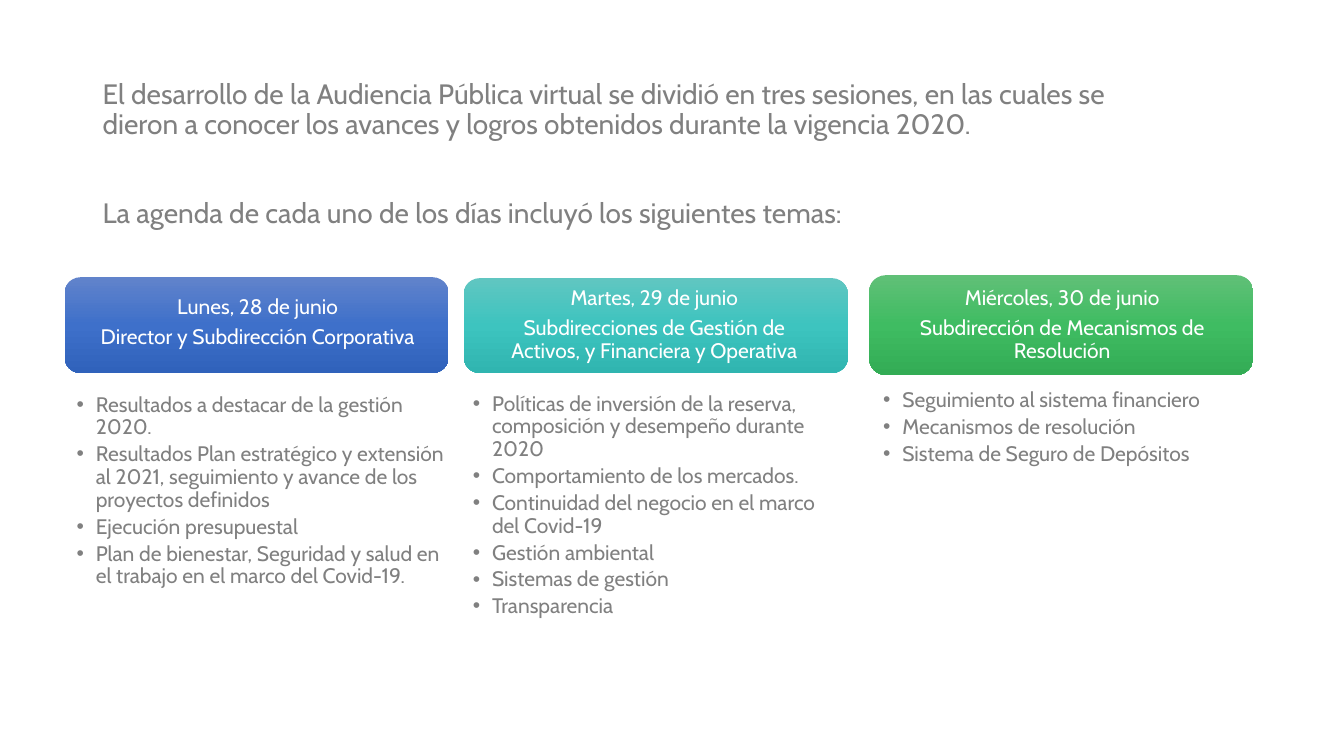
from dataclasses import dataclass

import pptx
import pptx.dml.color
import pptx.enum.shapes
import pptx.enum.text
import pptx.oxml.ns
import pptx.presentation
import pptx.shapes.autoshape
import pptx.slide
import pptx.util
from copy import deepcopy
from lxml import etree

Inches = pptx.util.Inches
Pt = pptx.util.Pt
RGBColor = pptx.dml.color.RGBColor
Align = pptx.enum.text.PP_ALIGN
Anchor = pptx.enum.text.MSO_ANCHOR
qn = pptx.oxml.ns.qn

FONT = "Cabin"
GRAY = RGBColor(0x80, 0x80, 0x80)
WHITE = RGBColor(0xFF, 0xFF, 0xFF)
BLUES = (RGBColor(0x61, 0x83, 0xCB), RGBColor(0x3E, 0x70, 0xCA), RGBColor(0x30, 0x62, 0xBB))
TEALS = (RGBColor(0x60, 0xC6, 0xC1), RGBColor(0x3D, 0xC4, 0xBF), RGBColor(0x30, 0xB5, 0xB0))
GREENS = (RGBColor(0x60, 0xC0, 0x77), RGBColor(0x3F, 0xBC, 0x62), RGBColor(0x33, 0xAC, 0x55))
BULLET_INDENT = Inches(0.19)

Box = tuple[float, float, float, float]


@dataclass(frozen=True)
class Session:
    card: Box
    heading: Box
    agenda: Box
    gradient: tuple[RGBColor, RGBColor, RGBColor]
    date: str
    speakers: str
    topics: tuple[str, ...]


SESSIONS = (
    Session(
        (0.64, 2.75, 3.81, 0.95), (0.66, 2.78, 3.79, 0.85), (0.57, 3.9, 3.92, 1.55), BLUES,
        "Lunes, 28 de junio",
        "Director y Subdirección Corporativa",
        (
            "Resultados a destacar de la gestión 2020.",
            "Resultados Plan estratégico y extensión al 2021, seguimiento y avance de los proyectos definidos",
            "Ejecución presupuestal",
            "Plan de bienestar, Seguridad y salud en el trabajo en el marco del Covid-19.",
        ),
    ),
    Session(
        (4.6, 2.76, 3.81, 0.94), (4.79, 2.8, 3.4, 0.85), (4.5, 3.89, 3.92, 1.67), TEALS,
        "Martes, 29 de junio",
        "Subdirecciones de Gestión de Activos, y Financiera y Operativa",
        (
            "Políticas de inversión de la reserva, composición y desempeño durante 2020",
            "Comportamiento de los mercados.",
            "Continuidad del negocio en el marco del Covid-19",
            "Gestión ambiental",
            "Sistemas de gestión",
            "Transparencia",
        ),
    ),
    Session(
        (8.62, 2.73, 3.81, 0.99), (8.84, 2.78, 3.39, 0.89), (8.57, 3.85, 3.5, 0.72), GREENS,
        "Miércoles, 30 de junio",
        "Subdirección de Mecanismos de Resolución",
        (
            "Seguimiento al sistema financiero",
            "Mecanismos de resolución",
            "Sistema de Seguro de Depósitos",
        ),
    ),
)

INTRO = (
    "El desarrollo de la Audiencia Pública virtual se dividió en tres sesiones, en las cuales se "
    "dieron a conocer los avances y logros obtenidos durante la vigencia 2020.",
    "La agenda de cada uno de los días incluyó los siguientes temas:",
)


def add_bullet(paragraph) -> None:
    properties = paragraph._p.get_or_add_pPr()
    properties.set("marL", str(BULLET_INDENT))
    properties.set("indent", str(-BULLET_INDENT))
    etree.SubElement(properties, qn("a:buFont")).set("typeface", "Arial")
    etree.SubElement(properties, qn("a:buChar")).set("char", "•")


def add_text(
    slide: pptx.slide.Slide,
    box: Box,
    lines: tuple[str, ...],
    size: float,
    color: RGBColor,
    insets: Box = (0.1, 0.05, 0.1, 0.05),
    align: Align = Align.LEFT,
    anchor: Anchor = Anchor.TOP,
    gap_before: float = 0,
    gap_after: float = 0,
    bulleted: bool = False,
) -> None:
    frame = slide.shapes.add_textbox(*map(Inches, box)).text_frame
    frame.word_wrap = True
    frame.vertical_anchor = anchor
    frame.margin_left, frame.margin_top, frame.margin_right, frame.margin_bottom = map(Inches, insets)
    frame.text = "\n".join(lines)
    for index, paragraph in enumerate(frame.paragraphs):
        if bulleted:
            add_bullet(paragraph)
        paragraph.alignment = align
        paragraph.line_spacing = 0.9
        paragraph.space_before = Pt(gap_before if index else 0)
        paragraph.space_after = Pt(gap_after)
        for run in paragraph.runs:
            run.font.name = FONT
            run.font.size = Pt(size)
            run.font.color.rgb = color


def fill_gradient(
    card: pptx.shapes.autoshape.Shape, colors: tuple[RGBColor, RGBColor, RGBColor]
) -> None:
    card.fill.gradient()
    card.fill.gradient_angle = 270
    stop_list = card._element.spPr.find(".//" + qn("a:gsLst"))
    stop_list.append(deepcopy(stop_list[-1]))
    for stop, color, position in zip(card.fill.gradient_stops, colors, (0, 0.5, 1)):
        stop.color.rgb = color
        stop.position = position


def add_session(slide: pptx.slide.Slide, session: Session) -> None:
    card = slide.shapes.add_shape(
        pptx.enum.shapes.MSO_SHAPE.ROUNDED_RECTANGLE, *map(Inches, session.card)
    )
    card.shadow.inherit = False
    card.line.fill.background()
    fill_gradient(card, session.gradient)
    add_text(
        slide, session.heading, (session.date, session.speakers), 15, WHITE,
        insets=(0.05, 0.05, 0.05, 0.05), align=Align.CENTER, anchor=Anchor.MIDDLE, gap_after=5.25,
    )
    add_text(
        slide, session.agenda, session.topics, 15, GRAY,
        insets=(0.19, 0.01, 0.08, 0.01), gap_after=3, bulleted=True,
    )


def main() -> None:
    deck: pptx.presentation.Presentation = pptx.Presentation()
    deck.slide_width = Inches(13.33)
    deck.slide_height = Inches(7.5)
    slide = deck.slides.add_slide(deck.slide_layouts[6])
    add_text(slide, (0.92, 0.75, 10.84, 1.24), INTRO, 20, GRAY, gap_before=41.6)
    for session in SESSIONS:
        add_session(slide, session)
    deck.save("out.pptx")


if __name__ == "__main__":
    main()
